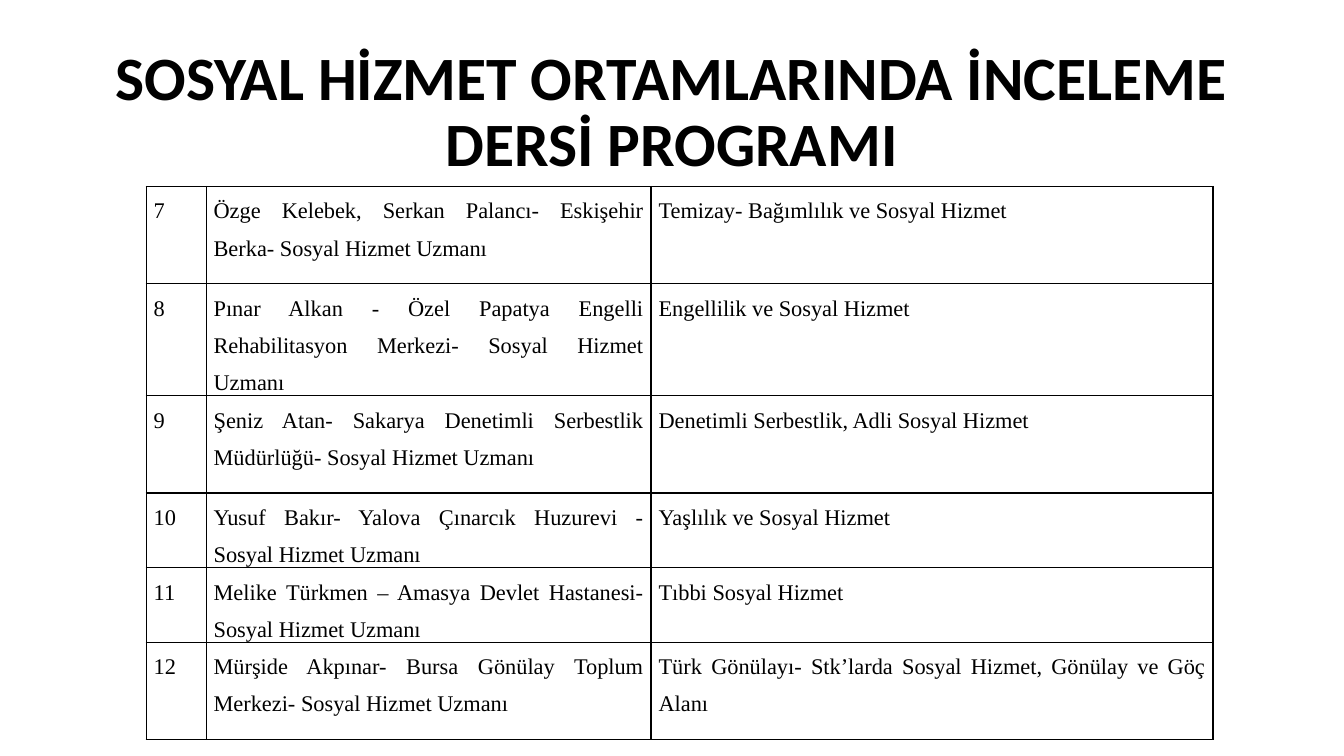
from lxml import etree
from pptx import Presentation
from pptx.dml.color import RGBColor
from pptx.enum.text import MSO_ANCHOR, PP_ALIGN
from pptx.oxml.ns import qn
from pptx.util import Pt

EMU_PER_PX = 4572  # 200 px to the inch
CENTER = PP_ALIGN.CENTER
JUSTIFY = PP_ALIGN.JUSTIFY
MIDDLE = MSO_ANCHOR.MIDDLE
TITLE_ONLY = 5
BLACK = "000000"

TITLE = "SOSYAL HİZMET ORTAMLARINDA İNCELEME DERSİ PROGRAMI"
FIRST_WEEK = 7
COLUMN_WIDTHS = [119, 883, 1115]
# Speaker, topic, row height
SESSIONS = [
    ("Özge Kelebek, Serkan Palancı- Eskişehir Berka- Sosyal Hizmet Uzmanı",
     "Temizay- Bağımlılık ve Sosyal Hizmet", 193),
    ("Pınar Alkan - Özel Papatya Engelli Rehabilitasyon Merkezi- Sosyal Hizmet Uzmanı",
     "Engellilik ve Sosyal Hizmet", 193),
    ("Şeniz Atan- Sakarya Denetimli Serbestlik Müdürlüğü- Sosyal Hizmet Uzmanı",
     "Denetimli Serbestlik, Adli Sosyal Hizmet", 193),
    ("Yusuf Bakır- Yalova Çınarcık Huzurevi - Sosyal Hizmet Uzmanı",
     "Yaşlılık ve Sosyal Hizmet", 130),
    ("Melike Türkmen – Amasya Devlet Hastanesi- Sosyal Hizmet Uzmanı",
     "Tıbbi Sosyal Hizmet", 130),
    ("Mürşide Akpınar- Bursa Gönülay Toplum Merkezi- Sosyal Hizmet Uzmanı",
     "Türk Gönülayı- Stk’larda Sosyal Hizmet, Gönülay ve Göç Alanı", 193),
]


def px(length):
    return length * EMU_PER_PX


def color(hex_string):
    return RGBColor.from_string(hex_string)


def write_text(text_frame, text, font, size, align, spacing, bold=False):
    paragraph = text_frame.paragraphs[0]
    paragraph.alignment = align
    paragraph.line_spacing = spacing
    run = paragraph.add_run()
    run.text = text
    run.font.name = font
    run.font.size = Pt(size)
    run.font.bold = bold
    run.font.color.rgb = color(BLACK)


def add_borders(cell, hex_string, width):
    properties = cell._tc.get_or_add_tcPr()
    for side in ("a:lnL", "a:lnR", "a:lnT", "a:lnB"):
        line = etree.SubElement(properties, qn(side), w=str(Pt(width)))
        fill = etree.SubElement(line, qn("a:solidFill"))
        etree.SubElement(fill, qn("a:srgbClr"), val=hex_string)


class SlideBuilder:
    title_font = "Calibri"
    body_font = "Times New Roman"

    def __init__(self, presentation):
        self.slide = presentation.slides.add_slide(presentation.slide_layouts[TITLE_ONLY])

    def title(self, text, left, top, width, height):
        shape = self.slide.shapes.title
        shape.left, shape.top = px(left), px(top)
        shape.width, shape.height = px(width), px(height)
        shape.text_frame.word_wrap = True
        shape.text_frame.vertical_anchor = MIDDLE
        write_text(shape.text_frame, text, self.title_font, 44, CENTER, 0.9, bold=True)

    def table(self, rows, column_widths, row_heights, left, top):
        table = self.slide.shapes.add_table(
            len(rows), len(column_widths), px(left), px(top),
            px(sum(column_widths)), px(sum(row_heights))).table
        table.first_row = table.horz_banding = False
        for column, width in zip(table.columns, column_widths):
            column.width = px(width)
        for row, height, texts in zip(table.rows, row_heights, rows):
            row.height = px(height)
            for cell, text in zip(row.cells, texts):
                self.cell(cell, text)

    def cell(self, cell, text):
        cell.margin_left = cell.margin_right = px(15)
        cell.margin_top = cell.margin_bottom = 0
        add_borders(cell, BLACK, 1)
        cell.fill.background()
        write_text(cell.text_frame, text, self.body_font, 16, JUSTIFY, 1.5)


def main():
    presentation = Presentation()
    presentation.slide_width, presentation.slide_height = px(2667), px(1500)
    builder = SlideBuilder(presentation)
    builder.title(TITLE, 183, 80, 2300, 290)
    rows = [(str(week), speaker, topic)
            for week, (speaker, topic, _) in enumerate(SESSIONS, FIRST_WEEK)]
    row_heights = [height for _, _, height in SESSIONS]
    builder.table(rows, COLUMN_WIDTHS, row_heights, 290, 370)
    presentation.save("out.pptx")


if __name__ == "__main__":
    main()
